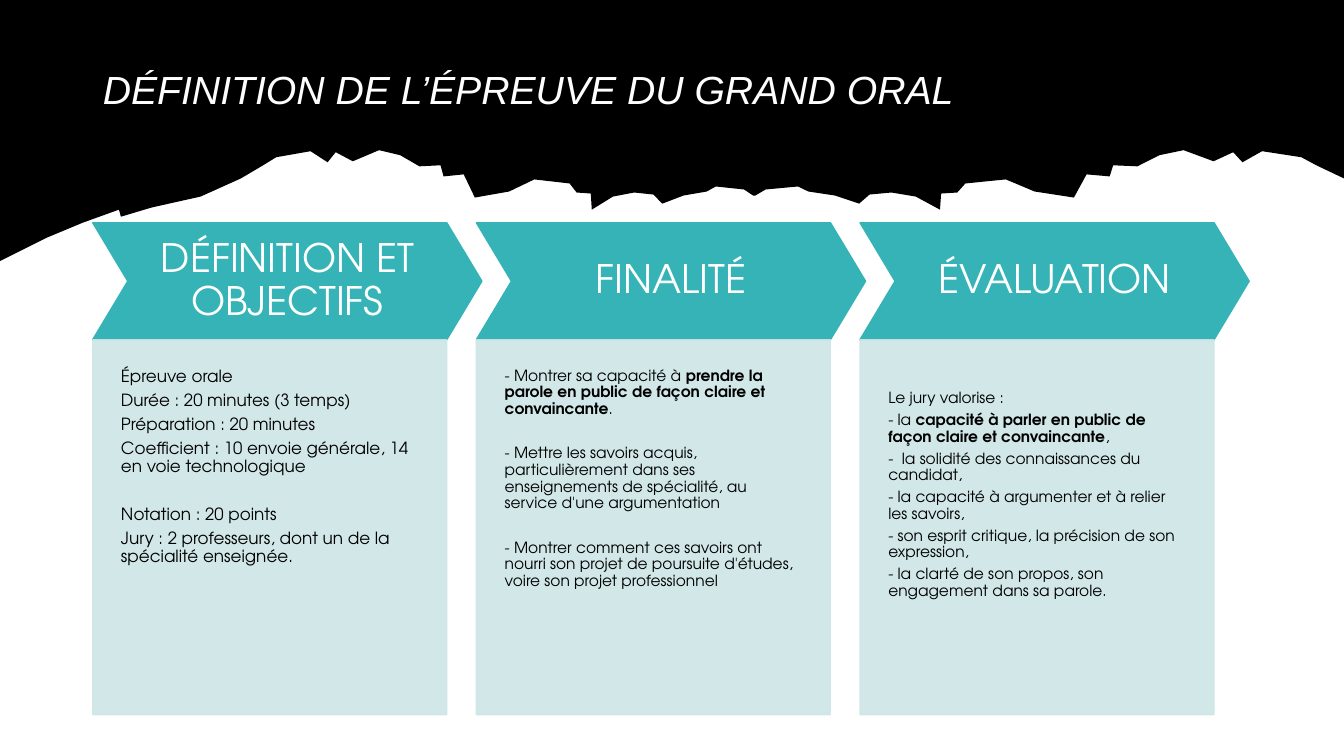
from lxml import etree
from pptx import Presentation
from pptx import util as u
from pptx.dml.color import RGBColor
from pptx.enum import shapes, text
from pptx.oxml.ns import qn

COLOURS = {"paper": "FFFFFF", "ridge": "000000", "teal": "35B3B7", "panel": "CEE5E6", "ink": "000000"}
BODY_FONT = "TeX Gyre Adventor"

# Grid in inches: three columns, a heading row and a detail row
WIDTH, HEIGHT = 13.33, 7.5
LEFT, PITCH = 0.92, 3.805
HEAD_TOP, HEAD_W, HEAD_H = 2.21, 3.86, 1.16
PANEL_W, PANEL_H = 3.51, 3.72

# Torn lower edge of the banner: a slope, then a ridge mirrored about its middle
SLOPE = [(0, 2.59), (0.46, 2.36), (0.82, 2.21), (1.18, 2.08),
         (1.2, 2.15), (1.5, 2.06), (1.99, 1.95), (2.39, 1.77)]
RIDGE = [(2.61, 1.64), (2.74, 1.56), (3.08, 1.5), (3.25, 1.61), (3.33, 1.51), (3.5, 1.6),
         (3.76, 1.49), (3.97, 1.54), (4.16, 1.65), (4.37, 1.64), (4.4, 1.75), (4.6, 1.73),
         (4.71, 1.96), (5.05, 1.9), (5.3, 1.78), (5.65, 1.82), (5.72, 1.91), (5.86, 1.92),
         (5.87, 2.08), (6.08, 1.95), (6.29, 1.91), (6.48, 1.93), (6.57, 2.02), (6.78, 1.94),
         (7.01, 1.9), (7.1, 1.85), (7.38, 1.88), (7.47, 1.94)]
RIDGE_MIDDLE, MIRROR_STRETCH = 7.48, 1.145

# Each column: heading, text size, top inset, paragraphs as (runs, gap before in points).
# Every second run is bold.
COLUMNS = [
    ("DÉFINITION ET OBJECTIFS", 12, 0.28, [
        (["Épreuve orale"], 0),
        (["Durée : 20 minutes (3 temps)"], 0),
        (["Préparation : 20 minutes"], 0),
        (["Coefficient : 10 envoie générale, 14 en voie technologique"], 0),
        (["Notation : 20 points"], 17),
        (["Jury : 2 professeurs, dont un de la spécialité enseignée."], 0),
    ]),
    ("FINALITÉ", 11, 0.28, [
        (["- Montrer sa capacité à ",
          "prendre la parole en public de façon claire et convaincante", "."], 0),
        (["- Mettre les savoirs acquis, particulièrement dans ses enseignements de "
          "spécialité, au service d'une argumentation"], 16),
        (["- Montrer comment ces savoirs ont nourri son projet de poursuite d'études, "
          "voire son projet professionnel"], 16),
    ]),
    ("ÉVALUATION", 11, 0.5, [
        (["Le jury valorise :"], 0),
        (["- la ", "capacité à parler en public de façon claire et convaincante", ","], 0),
        (["-  la solidité des connaissances du candidat,"], 0),
        (["- la capacité à argumenter et à relier les savoirs,"], 0),
        (["- son esprit critique, la précision de son expression,"], 0),
        (["- la clarté de son propos, son engagement dans sa parole."], 0),
    ]),
]


def colour(key):
    return RGBColor.from_string(COLOURS[key])


def paint(shape, key, alpha=None, outlined=True):
    shape.shadow.inherit = False
    shape.fill.solid()
    shape.fill.fore_color.rgb = colour(key)
    if outlined:
        shape.line.color.rgb = colour(key)
        shape.line.width = u.Pt(1)
    else:
        shape.line.fill.background()
    if alpha:
        for tint in shape.element.spPr.iter(qn("a:srgbClr")):
            etree.SubElement(tint, qn("a:alpha")).set("val", str(alpha * 1000))


def write_run(paragraph, words, size, key, face, bold=False, italic=False):
    run = paragraph.add_run()
    run.text = words
    font = run.font
    font.name, font.size, font.bold, font.italic = face, u.Pt(size), bold, italic
    font.color.rgb = colour(key)


def set_frame(frame, anchor, insets):
    frame.word_wrap = True
    frame.vertical_anchor = anchor
    frame.margin_left, frame.margin_top, frame.margin_right, frame.margin_bottom = map(u.Inches, insets)


def format_paragraph(paragraph, align, size, gap=0):
    paragraph.alignment = align
    paragraph.line_spacing = 0.9
    paragraph.space_before = u.Pt(gap)
    paragraph.space_after = u.Pt(0.35 * size)


def add_banner(slide):
    mirrored = [(RIDGE_MIDDLE + MIRROR_STRETCH * (RIDGE_MIDDLE - x), y) for x, y in reversed(RIDGE)]
    edge = SLOPE + RIDGE + mirrored + [(WIDTH, 1.77), (WIDTH, 0), (0, 0)]
    outline = [(u.Inches(x), u.Inches(y)) for x, y in edge]
    builder = slide.shapes.build_freeform(*outline[0])
    builder.add_line_segments(outline[1:], close=True)
    banner = builder.convert_to_shape()
    paint(banner, "ridge", outlined=False)
    slide.shapes.title.element.addprevious(banner.element)  # behind the title


def set_title(slide, words):
    title = slide.shapes.title
    title.left, title.top, title.width, title.height = map(u.Inches, (LEFT, 0.4, 11.5, 1.02))
    set_frame(title.text_frame, text.MSO_ANCHOR.MIDDLE, (0.1, 0.05, 0.1, 0.05))
    paragraph = title.text_frame.paragraphs[0]
    format_paragraph(paragraph, text.PP_ALIGN.LEFT, 0)
    write_run(paragraph, words, 28, "paper", "Arial", italic=True)


def add_heading(slide, left, words):
    chevron = slide.shapes.add_shape(
        shapes.MSO_SHAPE.CHEVRON, *map(u.Inches, (left, HEAD_TOP, HEAD_W, HEAD_H)))
    chevron.adjustments[0] = 0.3
    paint(chevron, "teal")
    set_frame(chevron.text_frame, text.MSO_ANCHOR.MIDDLE, [0.14] * 4)
    paragraph = chevron.text_frame.paragraphs[0]
    format_paragraph(paragraph, text.PP_ALIGN.CENTER, 28)
    write_run(paragraph, words, 28, "paper", BODY_FONT)


def add_panel(slide, left, size, top_inset, paragraphs):
    panel = slide.shapes.add_shape(
        shapes.MSO_SHAPE.RECTANGLE, *map(u.Inches, (left, HEAD_TOP + HEAD_H, PANEL_W, PANEL_H)))
    paint(panel, "panel", alpha=90)
    frame = panel.text_frame
    set_frame(frame, text.MSO_ANCHOR.TOP, (0.28, top_inset, 0.28, 0.56))
    for i, (runs, gap) in enumerate(paragraphs):
        paragraph = frame.add_paragraph() if i else frame.paragraphs[0]
        format_paragraph(paragraph, text.PP_ALIGN.LEFT, size, gap)
        for j, words in enumerate(runs):
            write_run(paragraph, words, size, "ink", BODY_FONT, bold=j % 2 == 1)


def main():
    deck = Presentation()
    deck.slide_width, deck.slide_height = u.Inches(WIDTH), u.Inches(HEIGHT)
    slide = deck.slides.add_slide(deck.slide_layouts[5])
    slide.background.fill.solid()
    slide.background.fill.fore_color.rgb = colour("paper")

    add_banner(slide)
    set_title(slide, "DÉFINITION DE L’ÉPREUVE DU GRAND ORAL")
    for i, (heading, size, top_inset, paragraphs) in enumerate(COLUMNS):
        left = LEFT + i * PITCH
        add_heading(slide, left, heading)
        add_panel(slide, left, size, top_inset, paragraphs)
    deck.save("out.pptx")


if __name__ == "__main__":
    main()
